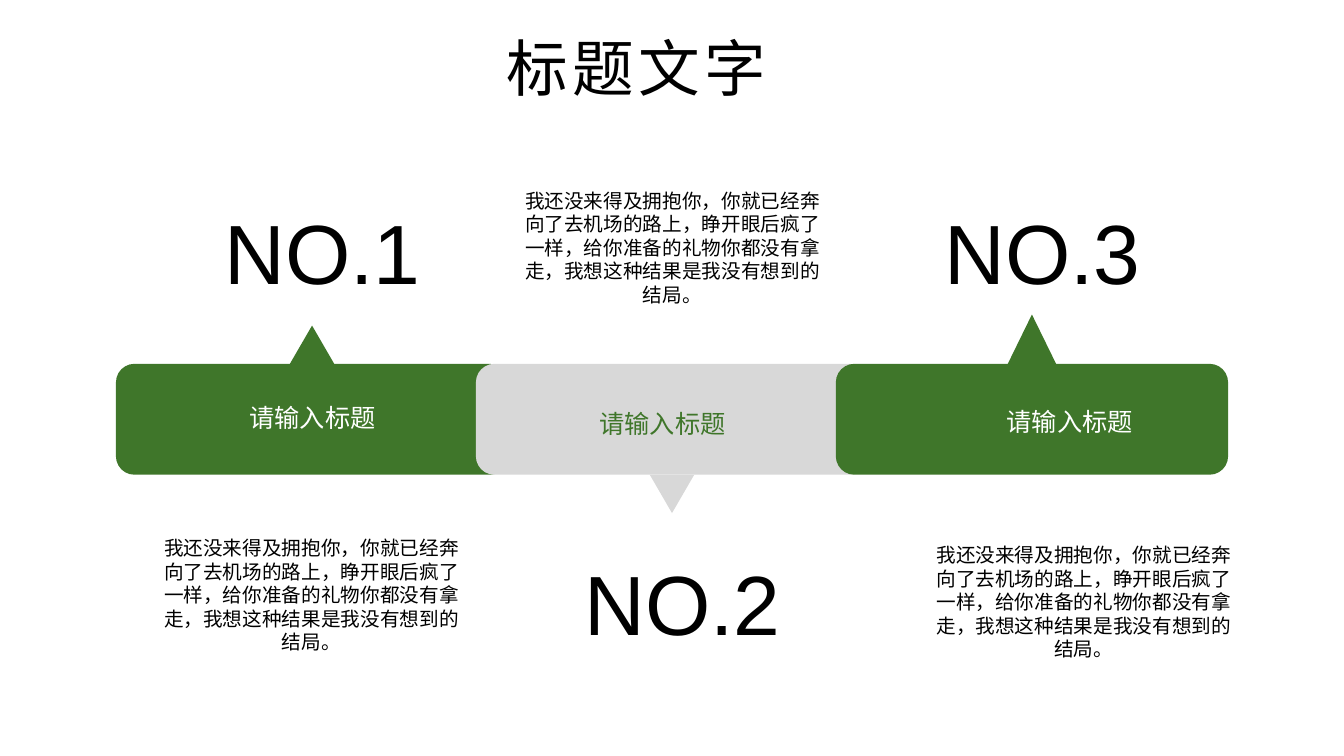
from pptx import Presentation
from pptx.dml.color import RGBColor
from pptx.enum.shapes import MSO_SHAPE as SHAPE
from pptx.enum.text import MSO_AUTO_SIZE as AUTO, PP_ALIGN as ALIGN
from pptx.util import Inches, Pt

GREEN, GRAY, WHITE, BLACK = "3F762A", "D8D8D8", "FFFFFF", "000000"
BAR_LEFT, BAR_TOP, BAR_W, BAR_H = 1.15, 3.61, 3.89, 1.1
BAR_STEP = 3.57
LABEL = "请输入标题"
BODY = ("我还没来得及拥抱你，你就已经奔向了去机场的路上，睁开眼后疯了一样，"
        "给你准备的礼物你都没有拿走，我想这种结果是我没有想到的结局。")

# Fill, label colour, tip size, then offsets from the bar's corner
STEPS = [
    dict(fill=GREEN, color=WHITE, tip=(0.44, 0.38), up=True,
         number=(0.98, -1.67), label=(1.22, 0.33), body=(0.31, 1.66)),
    dict(fill=GRAY, color=GREEN, tip=(0.44, 0.38), up=False,
         number=(0.98, 1.81), label=(1.12, 0.39), body=(0.32, -1.79)),
    dict(fill=GREEN, color=WHITE, tip=(0.48, 0.49), up=True,
         number=(0.98, -1.67), label=(1.59, 0.37), body=(0.83, 1.73)),
]


def rgb(color):
    return RGBColor.from_string(color)


def add_text(s, text, x, y, w, h, size=18, color=BLACK, font="Arial",
             align=ALIGN.LEFT, wrap=True, spacing=None):
    tf = s.shapes.add_textbox(Inches(x), Inches(y), Inches(w), Inches(h)).text_frame
    tf.word_wrap = wrap
    tf.auto_size = AUTO.SHAPE_TO_FIT_TEXT
    p = tf.paragraphs[0]
    p.alignment = align
    r = p.add_run()
    r.text = text
    r.font.size = Pt(size)
    r.font.name = font
    r.font.color.rgb = rgb(color)
    if spacing:
        r._r.get_or_add_rPr().set("spc", str(spacing * 100))


def add_block(s, kind, x, y, w, h, fill):
    sp = s.shapes.add_shape(kind, Inches(x), Inches(y), Inches(w), Inches(h))
    sp.shadow.inherit = False
    sp.fill.solid()
    sp.fill.fore_color.rgb = rgb(fill)
    sp.line.fill.background()
    return sp


def add_title(s, x, y, w, h):
    add_text(s, "标题文字", x, y, w, h, size=44, font="Noto Sans CJK JP", spacing=3)


def add_step(s, name, step, x, y, w, h):
    # Bar with its pointer
    add_block(s, SHAPE.ROUNDED_RECTANGLE, x, y, w, h, step["fill"])
    tip_w, tip_h = step["tip"]
    tip_y = y - tip_h if step["up"] else y + h
    tip = add_block(s, SHAPE.ISOSCELES_TRIANGLE, x + (w - tip_w) / 2, tip_y,
                    tip_w, tip_h, step["fill"])
    tip.rotation = 0 if step["up"] else 180

    # Number, label and description
    dx, dy = step["number"]
    add_text(s, name, x + dx, y + dy, 2.17, 1.11, size=60, wrap=False)
    dx, dy = step["label"]
    add_text(s, LABEL, x + dx, y + dy, 1.46, 0.4, color=step["color"],
             align=ALIGN.CENTER, wrap=False)
    dx, dy = step["body"]
    add_text(s, BODY, x + dx, y + dy, 3.26, 1.31, size=14, align=ALIGN.CENTER)


def main():
    prs = Presentation()
    prs.slide_width, prs.slide_height = Inches(13.33), Inches(7.5)
    s = prs.slides.add_slide(prs.slide_layouts[6])
    add_title(s, 4.93, 0.25, 3.19, 0.84)
    for i, step in enumerate(STEPS):
        add_step(s, f"NO.{i + 1}", step, BAR_LEFT + i * BAR_STEP, BAR_TOP, BAR_W, BAR_H)
    prs.save("out.pptx")


if __name__ == "__main__":
    main()
